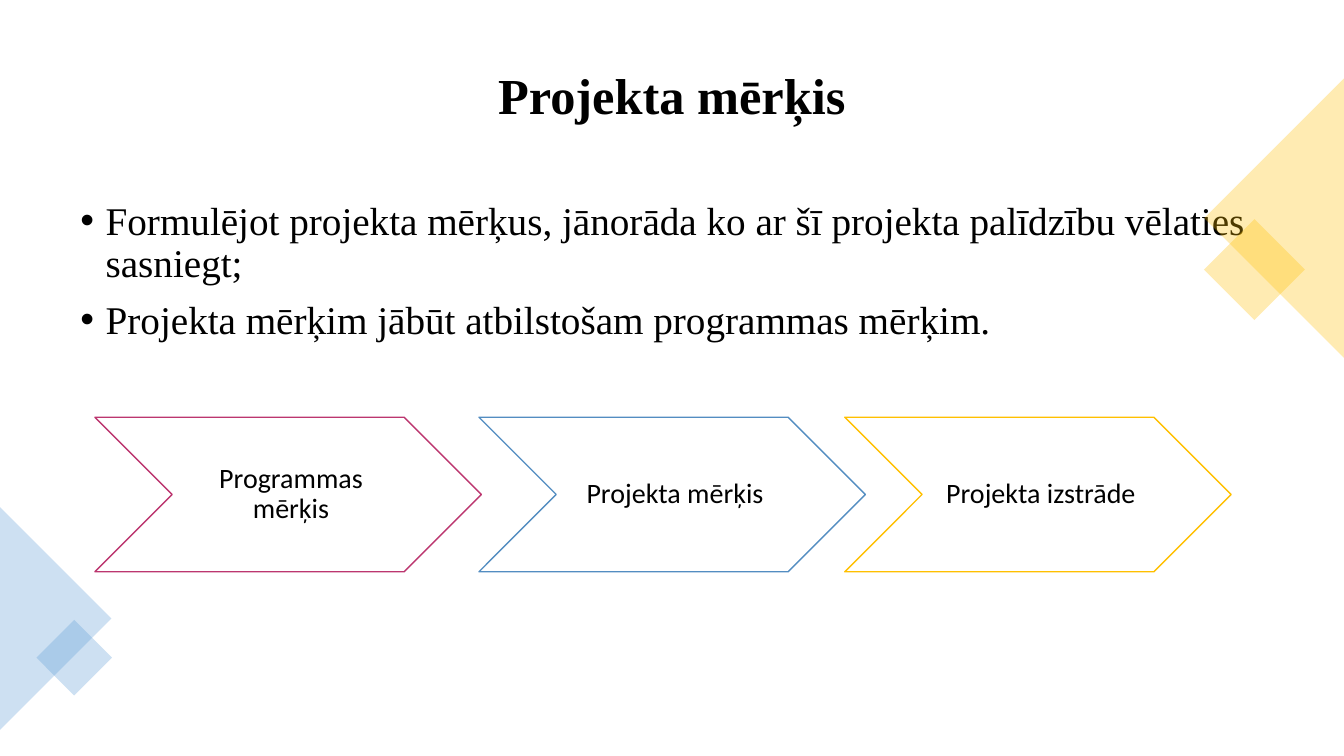
from lxml import etree
from pptx import Presentation
from pptx.dml.color import RGBColor
from pptx.enum.shapes import MSO_SHAPE as Shape
from pptx.enum.text import MSO_ANCHOR as Anchor, PP_ALIGN as Align
from pptx.oxml.ns import qn
from pptx.util import Pt

SLIDE_WIDTH, SLIDE_HEIGHT = 960, 540
YELLOW, BLUE = "FFC000", "5B9BD5"
TITLE_FONT = {"name": "Times New Roman", "size": Pt(36), "bold": True}
BODY_FONT = {"name": "Times New Roman", "size": Pt(28)}
STEP_FONT = {"name": "Calibri", "size": Pt(20)}
BULLETS = [
    "Formulējot projekta mērķus, jānorāda ko ar šī projekta palīdzību vēlaties sasniegt;",
    "Projekta mērķim jābūt atbilstošam programmas mērķim.",
]
# Step text, outline colour, offset from the left of the row
STEPS = [
    ("Programmas mērķis", "BC366F", 0),
    ("Projekta mērķis", "538DC1", 274.3),
    ("Projekta izstrāde", YELLOW, 535.6),
]


def color(hex_value):
    return RGBColor.from_string(hex_value)


def set_format(target, values):
    for name, value in values.items():
        setattr(target, name, value)


def write_paragraph(paragraph, text, font, **layout):
    paragraph.text = text
    set_format(paragraph, {"line_spacing": 0.9, **layout})
    set_format(paragraph.font, font)
    paragraph.font.color.rgb = color("000000")


def add_bullet(paragraph, indent):
    properties = paragraph._p.get_or_add_pPr()
    properties.set("marL", str(Pt(indent)))
    properties.set("indent", str(Pt(-indent)))
    etree.SubElement(properties, qn("a:buFont")).set("typeface", "Arial")
    etree.SubElement(properties, qn("a:buChar")).set("char", "•")


def add_filled_shape(slide, kind, box, fill):
    shape = slide.shapes.add_shape(kind, *map(Pt, box))
    shape.shadow.inherit = False
    shape.fill.solid()
    shape.fill.fore_color.rgb = color(fill)
    return shape


def add_title(slide, box, text):
    title = slide.shapes.title
    left, top, width, height = map(Pt, box)
    set_format(title, {"left": left, "top": top, "width": width, "height": height})
    set_format(title.text_frame, {"vertical_anchor": Anchor.MIDDLE, "word_wrap": True})
    write_paragraph(title.text_frame.paragraphs[0], text, TITLE_FONT, alignment=Align.CENTER)


def add_bullet_list(slide, box, lines):
    frame = slide.shapes.add_textbox(*map(Pt, box)).text_frame
    frame.word_wrap = True
    for index, line in enumerate(lines):
        paragraph = frame.add_paragraph() if index else frame.paragraphs[0]
        add_bullet(paragraph, 18)
        write_paragraph(paragraph, line, BODY_FONT, space_before=Pt(10 if index else 0))


def add_translucent(slide, kind, center, size, rotation, fill):
    (x, y), (width, height) = center, size
    box = (x - width / 2, y - height / 2, width, height)
    shape = add_filled_shape(slide, kind, box, fill)
    shape.rotation = rotation
    shape.line.fill.background()
    fill_color = shape._element.spPr.find(qn("a:solidFill"))[0]
    etree.SubElement(fill_color, qn("a:alpha")).set("val", "30000")


def add_edge_triangle(slide, edge, inward, y, base, fill):
    """Triangle with its base on a slide edge; inward is 1 to the right, -1 to the left."""
    center = (edge + inward * base / 4, y)
    add_translucent(slide, Shape.ISOSCELES_TRIANGLE, center, (base, base / 2),
                    90 if inward > 0 else 270, fill)


def add_diamond(slide, center, side, fill):
    add_translucent(slide, Shape.RECTANGLE, center, (side, side), 45, fill)


def add_steps(slide, box, steps):
    left, top, step_width, height = box
    margins = {"margin_left": Pt(6.3), "margin_right": Pt(2.1),
               "margin_top": Pt(2.1), "margin_bottom": Pt(2.1)}
    for text, outline, offset in steps:
        chevron = add_filled_shape(slide, Shape.CHEVRON,
                                   (left + offset, top, step_width, height), "FFFFFF")
        chevron.line.color.rgb = color(outline)
        chevron.line.width = Pt(1)
        set_format(chevron.text_frame, {"word_wrap": True, "vertical_anchor": Anchor.MIDDLE,
                                        **margins})
        write_paragraph(chevron.text_frame.paragraphs[0], text, STEP_FONT,
                        alignment=Align.CENTER)


def build_goal_slide(presentation):
    slide = presentation.slides.add_slide(presentation.slide_layouts[5])
    # Heading and bullets
    add_title(slide, (50.4, 25.2, 859, 89.3), "Projekta mērķis")
    add_bullet_list(slide, (50.4, 140.4, 859, 346.3), BULLETS)
    # Corner decoration
    add_diamond(slide, (896, 192.6), 51, YELLOW)
    add_edge_triangle(slide, SLIDE_WIDTH, -1, 155.8, 199.6, YELLOW)
    add_edge_triangle(slide, 0, 1, 441.8, 159.2, BLUE)
    add_diamond(slide, (53, 469.8), 38.2, BLUE)
    # Row of steps
    add_steps(slide, (67.8, 298, 276, 110.4), STEPS)


def main():
    presentation = Presentation()
    presentation.slide_width = Pt(SLIDE_WIDTH)
    presentation.slide_height = Pt(SLIDE_HEIGHT)
    build_goal_slide(presentation)
    presentation.save("out.pptx")


if __name__ == "__main__":
    main()
